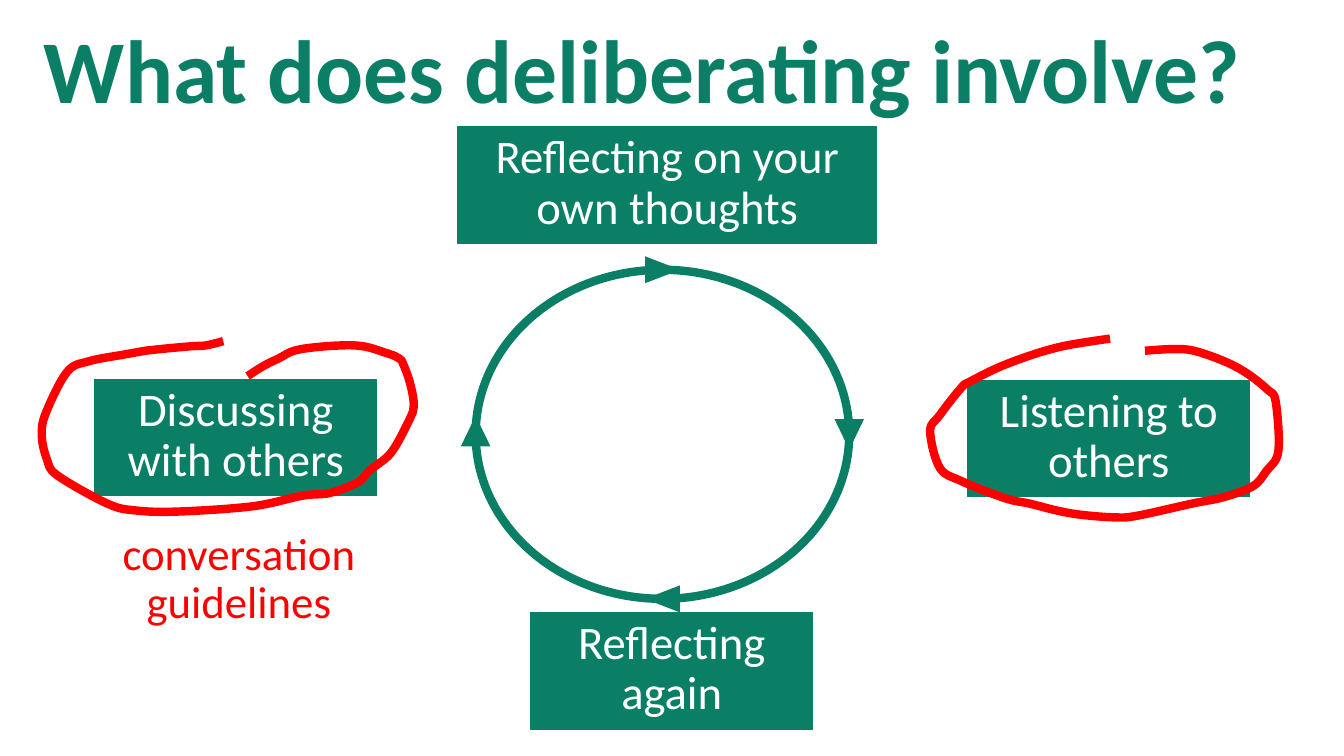
from dataclasses import dataclass

from lxml import etree
from pptx import Presentation
from pptx.dml.color import RGBColor
from pptx.enum import shapes, text
from pptx.oxml.ns import qn
from pptx.util import Cm, Pt


@dataclass(frozen=True)
class Theme:
    font: str = "Calibri"
    green: RGBColor = RGBColor(0x0B, 0x7F, 0x66)
    red: RGBColor = RGBColor(0xFF, 0x00, 0x00)
    white: RGBColor = RGBColor(0xFF, 0xFF, 0xFF)
    title_size: int = 48
    step_size: int = 25
    note_size: int = 24
    thin: float = 0.75
    thick: float = 4.5


THEME = Theme()

# Left, top, width, height in cm
TITLE_BOX = (0.58, 0.37, 24.05, 2.13)
CYCLE_BOX = (8.99, 5.1, 7.06, 6.22)
NOTE_BOX = (0.87, 9.92, 7.29, 2.11)
STEPS = {
    "Reflecting on your own thoughts": (8.65, 2.4, 7.92, 2.2),
    "Listening to others": (18.29, 7.19, 5.33, 2.2),
    "Reflecting again": (10.03, 11.58, 5.33, 2.2),
    "Discussing with others": (1.79, 7.17, 5.33, 2.2),
}

# Pen strokes: the origin on the slide, then points relative to it, in cm
DISCUSSING_STROKE = ((0.79, 6.45), [
    (3.43, 0), (3.1, 0.08), (2.77, 0.1), (1.96, 0.18), (1.57, 0.25), (0.89, 0.38),
    (0.48, 0.58), (0.08, 1.35), (0, 1.78), (0.1, 2.24), (0.3, 2.54), (1.24, 3.07),
    (1.78, 3.2), (2.59, 3.22), (3.99, 3.12), (4.93, 2.92), (5.44, 2.87), (5.97, 2.67),
    (6.2, 2.44), (6.6, 2.11), (6.93, 1.52), (7.03, 1.22), (6.96, 0.79), (6.83, 0.43),
    (6.76, 0.33), (6.53, 0.23), (5.92, 0.08), (4.9, 0.15), (4.47, 0.33), (4.17, 0.48),
    (3.89, 0.66)])
LISTENING_STROKE = ((17.58, 6.4), [
    (3.4, 0), (2.4, 0.17), (1.45, 0.48), (0.76, 0.81), (0.58, 0.94), (0.18, 1.45),
    (0, 1.75), (0.18, 2.44), (0.58, 2.69), (1.42, 3.02), (1.88, 3.12), (2.39, 3.25),
    (2.84, 3.33), (3.48, 3.38), (3.91, 3.35), (4.95, 3.12), (5.54, 3), (6.1, 2.79),
    (6.35, 2.51), (6.58, 2.13), (6.53, 1.19), (6.38, 0.97), (5.99, 0.66), (5.56, 0.43),
    (4.98, 0.23), (4.57, 0.2), (4.06, 0.23)])


def paint(shape, fill=None, line=None, width=THEME.thin):
    shape.shadow.inherit = False
    if fill is None:
        shape.fill.background()
    else:
        shape.fill.solid()
        shape.fill.fore_color.rgb = fill
    if line is None:
        shape.line.fill.background()
    else:
        shape.line.color.rgb = line
        shape.line.width = Pt(width)


def write(shape, wording, size, color, bold=False, align=text.PP_ALIGN.CENTER):
    frame = shape.text_frame
    frame.text = wording
    paragraph = frame.paragraphs[0]
    frame_format = {"word_wrap": True, "vertical_anchor": text.MSO_ANCHOR.TOP,
                    "auto_size": text.MSO_AUTO_SIZE.SHAPE_TO_FIT_TEXT}
    paragraph_format = {"alignment": align, "line_spacing": 0.9}
    font_format = {"name": THEME.font, "size": Pt(size), "bold": bold}
    font = paragraph.runs[0].font
    for target, values in ((frame, frame_format), (paragraph, paragraph_format),
                           (font, font_format)):
        for attribute, value in values.items():
            setattr(target, attribute, value)
    font.color.rgb = color


def add_title(slide, box):
    title = slide.shapes.add_textbox(*map(Cm, box))
    write(title, "What does deliberating involve?", THEME.title_size, THEME.green,
          bold=True, align=text.PP_ALIGN.LEFT)


def add_step(slide, wording, box):
    step = slide.shapes.add_shape(shapes.MSO_SHAPE.RECTANGLE, *map(Cm, box))
    paint(step, fill=THEME.green, line=THEME.green)
    write(step, wording, THEME.step_size, THEME.white)


def add_cycle(slide, box):
    """Ring with a clockwise arrowhead centred on each of its four extremes."""
    left, top, width, height = box
    group = slide.shapes.add_group_shape()
    ring = group.shapes.add_shape(shapes.MSO_SHAPE.OVAL, *map(Cm, box))
    paint(ring, line=THEME.green, width=THEME.thick)
    side, level = (0.56, 0.58), (0.51, 0.66)
    for across, down, rotation, (base, length) in (
            (1, 0.5, 180, side), (0, 0.49, 0, side),
            (0.5, 0, 90, level), (0.5, 1, 270, level)):
        arrowhead = group.shapes.add_shape(
            shapes.MSO_SHAPE.ISOSCELES_TRIANGLE,
            Cm(left + across * width - base / 2), Cm(top + down * height - length / 2),
            Cm(base), Cm(length))
        arrowhead.rotation = rotation
        paint(arrowhead, fill=THEME.green)


def round_off(freeform):
    """Turn the straight segments into Bézier curves through the same points."""
    points = [(int(pt.get("x")), int(pt.get("y")))
              for pt in freeform.element.iter(qn("a:pt"))]
    padded = [points[0], *points, points[-1]]
    segments = list(freeform.element.iter(qn("a:lnTo")))
    for segment, before, start, end, after in zip(
            segments, padded, padded[1:], padded[2:], padded[3:]):
        leaving = [s + (e - b) / 6 for b, s, e in zip(before, start, end)]
        arriving = [e - (a - s) / 6 for s, e, a in zip(start, end, after)]
        curve = etree.Element(qn("a:cubicBezTo"))
        for x, y in (leaving, arriving, end):
            etree.SubElement(curve, qn("a:pt"), x=str(round(x)), y=str(round(y)))
        segment.getparent().replace(segment, curve)


def add_pen_stroke(slide, origin, points):
    start, *rest = [(Cm(x), Cm(y)) for x, y in points]
    builder = slide.shapes.build_freeform(*start)
    builder.add_line_segments(rest, close=False)
    stroke = builder.convert_to_shape(*map(Cm, origin))
    round_off(stroke)
    paint(stroke, line=THEME.red, width=THEME.thick)


def add_note(slide, box):
    note = slide.shapes.add_textbox(*map(Cm, box))
    write(note, "conversation guidelines", THEME.note_size, THEME.red)


def main():
    deck = Presentation()
    deck.slide_width, deck.slide_height = Cm(25.4), Cm(14.29)
    slide = deck.slides.add_slide(deck.slide_layouts[6])
    add_title(slide, TITLE_BOX)
    for wording, box in STEPS.items():
        add_step(slide, wording, box)
    add_cycle(slide, CYCLE_BOX)
    add_pen_stroke(slide, *DISCUSSING_STROKE)
    add_note(slide, NOTE_BOX)
    add_pen_stroke(slide, *LISTENING_STROKE)
    deck.save("out.pptx")


if __name__ == "__main__":
    main()
